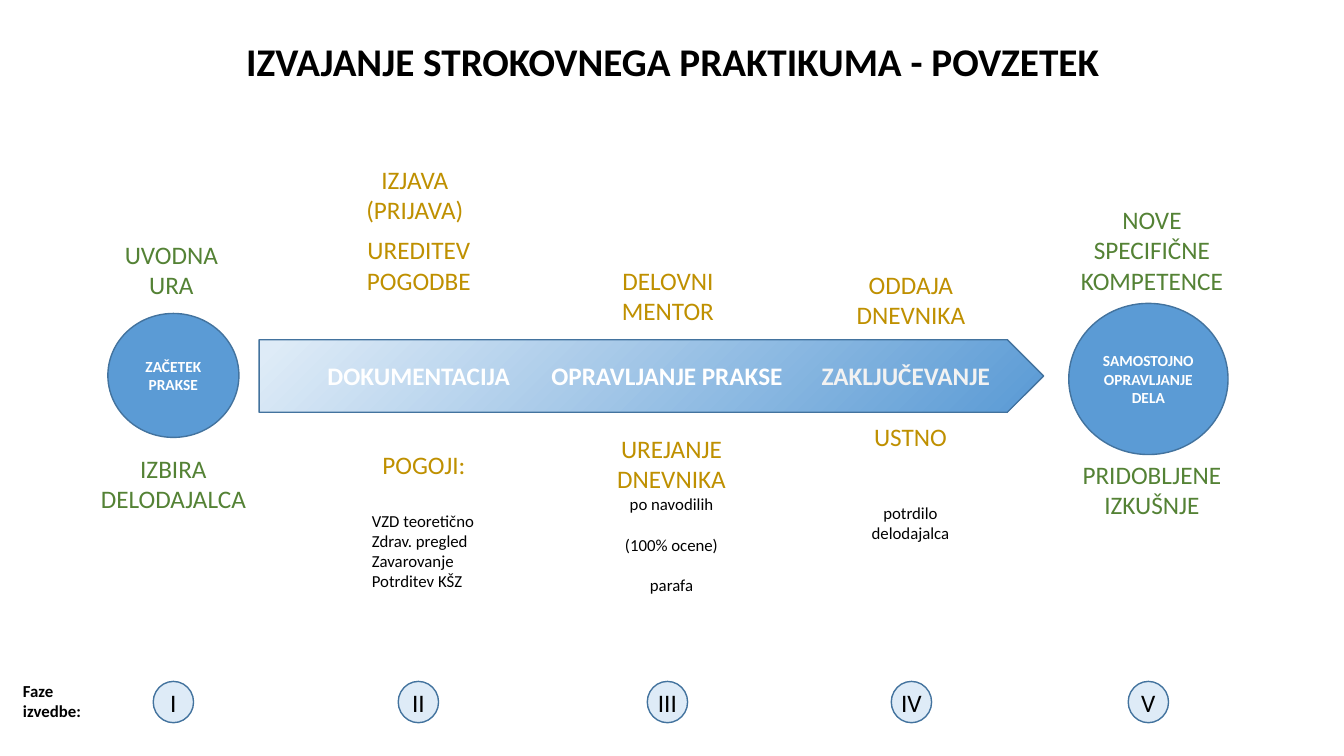
from dataclasses import dataclass

from pptx import Presentation
from pptx.dml.color import RGBColor
from pptx.enum.shapes import MSO_SHAPE
from pptx.enum.text import MSO_ANCHOR, MSO_AUTO_SIZE, PP_ALIGN
from pptx.oxml import parse_xml
from pptx.oxml.ns import nsdecls, qn
from pptx.util import Inches, Pt


@dataclass(frozen=True)
class Theme:
    font: str = "Calibri"
    black: str = "000000"
    white: str = "FFFFFF"
    off_white: str = "F2F2F2"
    green: str = "548235"
    gold: str = "BF9000"
    blue: str = "5B9BD5"
    pale_blue: str = "DEEBF7"
    outline: str = "43739E"
    title_size: int = 28
    label_size: int = 18
    detail_size: int = 12
    circle_size: int = 11


@dataclass(frozen=True)
class Box:
    left: float
    top: float
    width: float
    height: float

    def inner(self, dx, dy, width, height):
        """Box of the given size, offset from this box's top left corner."""
        return Box(self.left + dx, self.top + dy, width, height)

    def lengths(self):
        return [Inches(v) for v in (self.left, self.top, self.width, self.height)]


THEME = Theme()


def write_text(frame, text, size=THEME.label_size, color=THEME.black, bold=False,
               align=PP_ALIGN.CENTER, before=0, append=False):
    """Write one paragraph per line of text; before is the gap above the first."""
    frame.word_wrap = True
    for index, line in enumerate(text.split("\n")):
        para = frame.add_paragraph() if append or index else frame.paragraphs[0]
        para.alignment = align
        para.space_before = Pt(0 if index else before)
        span = para.add_run()
        span.text = line
        span.font.name = THEME.font
        span.font.size = Pt(size)
        span.font.bold = bold
        span.font.color.rgb = RGBColor.from_string(color)


def add_text(page, box, text, **text_format):
    frame = page.shapes.add_textbox(*box.lengths()).text_frame
    write_text(frame, text, **text_format)
    return frame


def add_outlined(page, kind, box, fill):
    shape = page.shapes.add_shape(kind, *box.lengths())
    shape.shadow.inherit = False
    shape.fill.solid()
    shape.fill.fore_color.rgb = RGBColor.from_string(fill)
    shape.line.color.rgb = RGBColor.from_string(THEME.outline)
    shape.line.width = Pt(1)
    shape.text_frame.vertical_anchor = MSO_ANCHOR.MIDDLE
    return shape


def add_title(page, box, text):
    title = page.shapes.title
    title.left, title.top, title.width, title.height = box.lengths()
    title.text_frame.auto_size = MSO_AUTO_SIZE.NONE
    title.text_frame.vertical_anchor = MSO_ANCHOR.TOP
    write_text(title.text_frame, text, size=THEME.title_size, bold=True)


def add_process_arrow(page, box, stages):
    arrow = add_outlined(page, MSO_SHAPE.PENTAGON, box, THEME.blue)
    properties = arrow._element.spPr
    stops = "".join(
        f'<a:gs pos="{percent * 1000}"><a:srgbClr val="{color}"/></a:gs>'
        for percent, color in ((2, THEME.pale_blue), (99, THEME.blue), (100, THEME.pale_blue)))
    gradient = parse_xml(
        f'<a:gradFill {nsdecls("a")} rotWithShape="1"><a:gsLst>{stops}</a:gsLst>'
        '<a:path path="circle"><a:fillToRect r="100000" b="100000"/></a:path></a:gradFill>')
    properties.replace(properties.find(qn("a:solidFill")), gradient)
    for dx, width, name, color in stages:
        add_text(page, box.inner(dx, 0.16, width, 0.4), name, color=color,
                 bold=True, align=PP_ALIGN.LEFT)


def add_milestone(page, box, circle, name, labels):
    """A named circle with green labels above and below it."""
    shape = add_outlined(page, MSO_SHAPE.FLOWCHART_CONNECTOR, box.inner(*circle), THEME.blue)
    write_text(shape.text_frame, name, size=THEME.circle_size, color=THEME.white, bold=True)
    for place, text in labels:
        add_text(page, box.inner(*place), text, color=THEME.green)


def add_stage_notes(page, box, labels, details):
    """Gold labels, with black details continuing below the last one."""
    for place, text in labels:
        frame = add_text(page, box.inner(*place), text, color=THEME.gold)
    for text, before, align in details:
        write_text(frame, text, size=THEME.detail_size, before=before,
                   align=align, append=True)


def add_phase_row(page, box, caption, phases):
    add_text(page, box.inner(0, 0, 1.1, 0.5), caption, size=THEME.detail_size,
             bold=True, align=PP_ALIGN.LEFT)
    for dx, numeral in phases:
        circle = add_outlined(page, MSO_SHAPE.OVAL, box.inner(dx, 0.06, 0.4, 0.41),
                              THEME.pale_blue)
        frame = circle.text_frame
        frame.margin_left = frame.margin_right = frame.margin_top = frame.margin_bottom = 0
        write_text(frame, numeral)


def main():
    deck = Presentation()
    deck.slide_width, deck.slide_height = Inches(13.33), Inches(7.5)
    page = deck.slides.add_slide(deck.slide_layouts[5])

    add_title(page, Box(0.34, 0.32, 12.66, 0.57),
              "IZVAJANJE STROKOVNEGA PRAKTIKUMA - POVZETEK")
    add_process_arrow(page, Box(2.57, 3.37, 7.78, 0.72), [
        (0.58, 2.1, "DOKUMENTACIJA", THEME.white),
        (2.8, 2.5, "OPRAVLJANJE PRAKSE", THEME.white),
        (5.48, 1.97, "ZAKLJUČEVANJE", THEME.off_white)])

    add_milestone(page, Box(0.89, 2.32, 1.66, 2.84), (0.18, 0.79, 1.3, 1.23),
                  "ZAČETEK PRAKSE",
                  [((0.16, 0, 1.3, 0.71), "UVODNA URA"),
                   ((0, 2.13, 1.66, 0.71), "IZBIRA DELODAJALCA")])
    add_milestone(page, Box(10.6, 1.98, 1.63, 3.24), (0, 1.03, 1.58, 1.5),
                  "SAMOSTOJNO OPRAVLJANJE DELA",
                  [((0.02, 0, 1.61, 1.01), "NOVE SPECIFIČNE KOMPETENCE"),
                   ((0.02, 2.53, 1.61, 0.71), "PRIDOBLJENE IZKUŠNJE")])

    add_stage_notes(page, Box(3.5, 1.58, 1.32, 4.34),
                    [((0, 0, 1.23, 0.71), "IZJAVA\n(PRIJAVA)"),
                     ((0.04, 0.7, 1.23, 0.71), "UREDITEV POGODBE"),
                     ((0.09, 2.83, 1.23, 1.51), "POGOJI:")],
                    [("VZD teoretično\nZdrav. pregled\nZavarovanje\nPotrditev KŠZ",
                      22, PP_ALIGN.LEFT)])
    add_stage_notes(page, Box(5.85, 2.58, 1.62, 3.39),
                    [((0.16, 0, 1.23, 0.71), "DELOVNI MENTOR"),
                     ((0, 1.67, 1.62, 1.72), "UREJANJE DNEVNIKA")],
                    [("po navodilih", 0, PP_ALIGN.CENTER),
                     ("(100% ocene)", 14.6, PP_ALIGN.CENTER),
                     ("parafa", 14.6, PP_ALIGN.CENTER)])
    add_stage_notes(page, Box(8.27, 2.62, 1.53, 2.82),
                    [((0, 0, 1.53, 0.71), "ODDAJA DNEVNIKA"),
                     ((0, 1.51, 1.52, 1.31), "USTNO")],
                    [("potrdilo delodajalca", 36.6, PP_ALIGN.CENTER)])

    add_phase_row(page, Box(0.13, 6.7, 11.46, 0.5), "Faze izvedbe:",
                  [(1.39, "I"), (3.82, "II"), (6.29, "III"), (8.71, "IV"), (11.06, "V")])
    deck.save("out.pptx")


if __name__ == "__main__":
    main()
